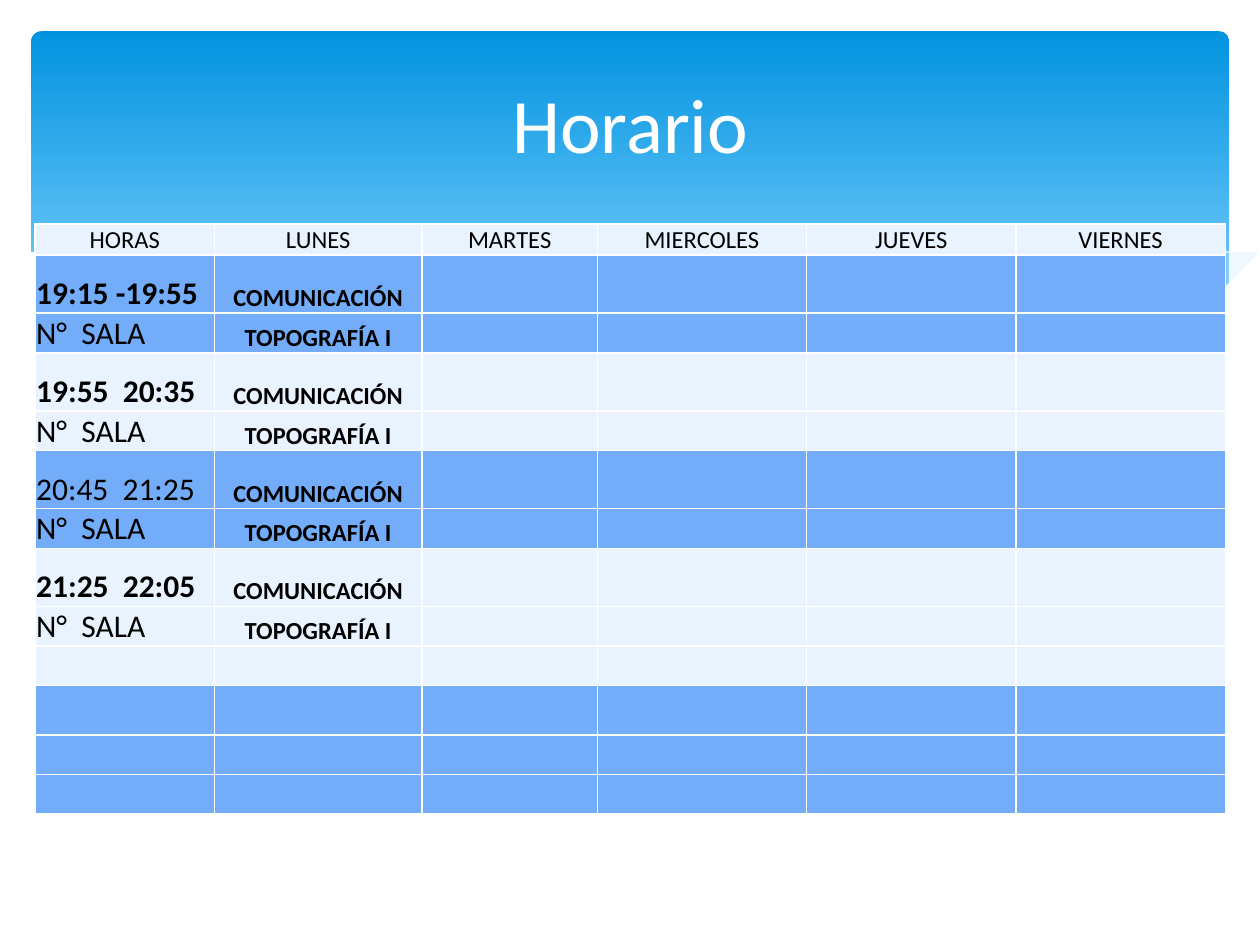
from dataclasses import dataclass
from typing import Optional

from lxml.etree import SubElement
from pptx import Presentation
from pptx.dml.color import RGBColor
from pptx.enum.shapes import MSO_SHAPE
from pptx.enum.text import MSO_ANCHOR, PP_ALIGN
from pptx.oxml.ns import qn
from pptx.util import Cm, Pt

WHITE = RGBColor(0xFF, 0xFF, 0xFF)
BLACK = RGBColor(0, 0, 0)
DEEP = RGBColor(0x02, 0x93, 0xE0)
SKY = RGBColor(0x83, 0xD3, 0xFE)
MIST = RGBColor(0xC6, 0xE7, 0xFC)
PALE = RGBColor(0xE8, 0xF3, 0xFF)
BLUE = RGBColor(0x73, 0xAC, 0xF8)
FONT = "Calibri"
UNIT = Cm(2.54)  # wave points are in inches


@dataclass
class Wave:
    points: list
    fill: Optional[RGBColor] = None
    alpha: int = 100


@dataclass
class Row:
    height: float
    fill: RGBColor
    texts: tuple = ()
    bold: tuple = (False, True)


WAVES = [
    Wave([(9.76, 2), (9.35, 2.07), (8.61, 2.23), (7.79, 2.42), (7.06, 2.57),
          (6.61, 2.65), (7.05, 2.71), (7.57, 2.76), (8.03, 2.78), (8.54, 2.76),
          (8.97, 2.7), (9.35, 2.62), (9.76, 2.47)], MIST, 29),
    Wave([(8.93, 2.73), (8.37, 2.65), (7.75, 2.54), (7.06, 2.4), (6.29, 2.22),
          (5.69, 2.08), (5.14, 1.98), (4.65, 1.91), (4.2, 1.87), (3.8, 1.85),
          (3.28, 1.87), (2.86, 1.91), (3.42, 1.99), (4.04, 2.11), (4.91, 2.32),
          (5.66, 2.48), (6.34, 2.61), (6.95, 2.7), (7.48, 2.76), (8.07, 2.78),
          (8.57, 2.77)], MIST, 40),
    Wave([(3.09, 1.95), (3.44, 1.9), (3.87, 1.87), (4.33, 1.87), (4.89, 1.9),
          (5.56, 1.97), (6.36, 2.08), (7.27, 2.26), (8.31, 2.51), (9.07, 2.72)]),
    Wave([(6.13, 2.57), (6.72, 2.41), (7.48, 2.23), (8.36, 2.04), (8.95, 1.94),
          (9.38, 1.88), (9.75, 1.85)]),
    Wave([(9.77, 2.46), (9.4, 2.59), (8.99, 2.69), (8.5, 2.75), (8.09, 2.77),
          (7.44, 2.74), (6.68, 2.65), (5.79, 2.5), (5.03, 2.33), (4.18, 2.13),
          (3.4, 1.97), (2.71, 1.88), (2.11, 1.84), (1.61, 1.84), (1.06, 1.89),
          (0.67, 1.97), (0.4, 2.05), (0.23, 2.13), (0.23, 3.29), (9.77, 3.29)],
         WHITE),
]

COLS = [3.61, 4.19, 3.53, 4.22, 4.22, 4.22]
DAYS = ("HORAS", "LUNES", "MARTES", "MIERCOLES", "JUEVES", "VIERNES")
HOURS = [("19:15 -19:55", True), ("19:55  20:35", True),
         ("20:45  21:25", False), ("21:25  22:05", True)]
TALL, LOW = 1.17, 0.8


def set_all(item, **values) -> None:
    for name, value in values.items():
        setattr(item, name, value)


def plan_rows() -> list:
    rows = [Row(0.62, PALE, DAYS, (False,) * len(DAYS))]
    for i, (hour, bold) in enumerate(HOURS):
        fill = PALE if i % 2 else BLUE
        rows.append(Row(TALL, fill, (hour, "COMUNICACIÓN"), (bold, True)))
        rows.append(Row(LOW, fill, ("N°  SALA", "TOPOGRAFÍA I")))
    rows.append(Row(LOW, PALE))
    return rows + [Row(high, BLUE) for high in (0.99, LOW, LOW)]


def draw_band(shapes) -> None:
    band = shapes.add_shape(MSO_SHAPE.ROUNDED_RECTANGLE,
                            Cm(0.63), Cm(0.63), Cm(24.15), Cm(6.86))
    band.adjustments[0] = 0.03
    band.shadow.inherit = False
    band.line.fill.background()
    band.fill.gradient()
    band.fill.gradient_angle = 270
    for stop, color, place in zip(band.fill.gradient_stops, (DEEP, SKY), (0, 0.9)):
        stop.color.rgb = color
        stop.position = place


def draw_wave(shapes, wave: Wave) -> None:
    solid = wave.fill is not None
    (x, y), *rest = wave.points
    pen = shapes.build_freeform(x, y, scale=UNIT)
    pen.add_line_segments(rest, close=solid)
    shape = pen.convert_to_shape()
    shape.shadow.inherit = False
    if not solid:
        shape.fill.background()
        shape.line.color.rgb = WHITE
        shape.line.width = Pt(0)
        return
    shape.line.fill.background()
    shape.fill.solid()
    shape.fill.fore_color.rgb = wave.fill
    if wave.alpha < 100:
        tint = shape.element.spPr.find(".//" + qn("a:srgbClr"))
        SubElement(tint, qn("a:alpha"), val=str(wave.alpha * 1000))


def edge_cell(cell) -> None:
    props = cell._tc.get_or_add_tcPr()
    for side in ("a:lnL", "a:lnR", "a:lnT", "a:lnB"):
        line = SubElement(props, qn(side), w=str(Pt(1)))
        fill = SubElement(line, qn("a:solidFill"))
        SubElement(fill, qn("a:srgbClr"), val=str(WHITE))


def write_cell(cell, text: str, size: int, bold: bool, align) -> None:
    para = cell.text_frame.paragraphs[0]
    para.alignment = align
    run = para.add_run()
    run.text = text
    set_all(run.font, name=FONT, size=Pt(size), bold=bold)
    run.font.color.rgb = BLACK


def draw_table(shapes, rows: list) -> None:
    table = shapes.add_table(len(rows), len(COLS), Cm(0.71), Cm(4.52), Cm(sum(COLS)),
                             Cm(sum(row.height for row in rows))).table
    set_all(table, first_row=False, horz_banding=False)
    for col, width in zip(table.columns, COLS):
        col.width = Cm(width)
    for i, row in enumerate(rows):
        table.rows[i].height = Cm(row.height)
        for j, cell in enumerate(table.rows[i].cells):
            edge_cell(cell)
            cell.fill.solid()
            cell.fill.fore_color.rgb = row.fill
            set_all(cell, vertical_anchor=MSO_ANCHOR.BOTTOM, margin_left=Cm(0.02),
                    margin_right=Cm(0.02), margin_top=Cm(0.02), margin_bottom=0)
            if j < len(row.texts):
                hour = i > 0 and j == 0
                write_cell(cell, row.texts[j], 18 if hour else 14, row.bold[j],
                           PP_ALIGN.LEFT if hour else PP_ALIGN.CENTER)


def draw_title(shapes) -> None:
    title = shapes.title
    set_all(title, left=Cm(0.71), top=Cm(0.74), width=Cm(24), height=Cm(3.48))
    title.text_frame.text = "Horario"
    title.text_frame.vertical_anchor = MSO_ANCHOR.MIDDLE
    para = title.text_frame.paragraphs[0]
    para.alignment = PP_ALIGN.CENTER
    set_all(para.runs[0].font, name=FONT, size=Pt(44))
    para.runs[0].font.color.rgb = WHITE
    shapes.element.append(title.element)  # bring to front


def main() -> None:
    deck = Presentation()
    set_all(deck, slide_width=Cm(25.4), slide_height=Cm(19.05))
    shapes = deck.slides.add_slide(deck.slide_layouts[5]).shapes
    # Header band and its waves
    draw_band(shapes)
    for wave in WAVES:
        draw_wave(shapes, wave)
    # Timetable and title
    draw_table(shapes, plan_rows())
    draw_title(shapes)
    deck.save("out.pptx")


if __name__ == "__main__":
    main()
